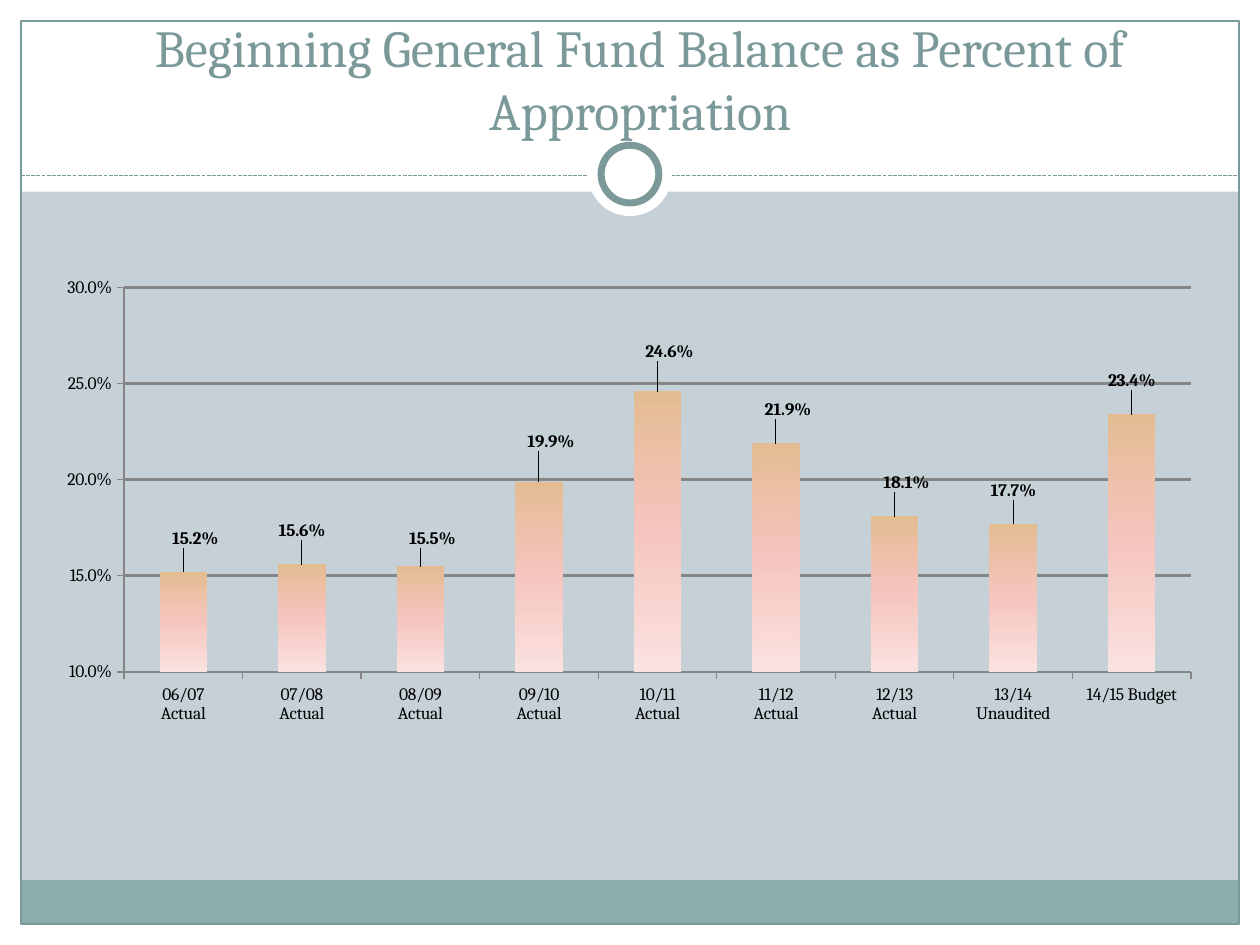
import copy
import pptx
import pptx.chart.data
import pptx.dml.color
import pptx.enum.chart
import pptx.enum.dml
import pptx.enum.shapes
import pptx.enum.text
import pptx.oxml
import pptx.oxml.ns
import pptx.util

Pt = pptx.util.Pt
RGB = pptx.dml.color.RGBColor
SHAPE = pptx.enum.shapes.MSO_SHAPE
CHART = pptx.enum.chart

WHITE = RGB(0xFF, 0xFF, 0xFF)
BLACK = RGB(0x00, 0x00, 0x00)
MIST = RGB(0xC5, 0xD1, 0xD7)
TEAL = RGB(0x7C, 0x99, 0x9A)
BAND = RGB(0x8C, 0xAD, 0xAE)
GRAY = RGB(0x86, 0x86, 0x86)
GOLD = RGB(0xCC, 0xB4, 0x00)
FADE = [(0, RGB(0xE3, 0xBC, 0x92)), (0.5, RGB(0xF6, 0xC5, 0xBF)), (1, RGB(0xFA, 0xE2, 0xE0))]

FUNDS = [
    ("06/07\nActual", 0.152, 0.01, -0.03),
    ("07/08\nActual", 0.156, 0, -0.03),
    ("08/09\nActual", 0.155, 0.01, -0.02),
    ("09/10\nActual", 0.199, 0.01, -0.04),
    ("10/11\nActual", 0.246, 0.01, -0.04),
    ("11/12\nActual", 0.219, 0.01, -0.03),
    ("12/13\nActual", 0.181, 0.01, -0.03),
    ("13/14 Unaudited", 0.177, 0, -0.03),
    ("14/15 Budget", 0.234, 0, -0.03),
]


def layout(**parts):
    body = "".join(f'<c:{key} val="{val}"/>' for key, val in parts.items())
    space = pptx.oxml.ns.nsdecls("c")
    return pptx.oxml.parse_xml(
        f"<c:layout {space}><c:manualLayout>{body}</c:manualLayout></c:layout>")


class Deck:
    face = "Cambria"

    def __init__(self):
        self.show = pptx.Presentation()
        self.show.slide_width, self.show.slide_height = Pt(720), Pt(540)
        self.slide = self.show.slides.add_slide(self.show.slide_layouts[5])
        fill = self.slide.background.fill
        fill.solid()
        fill.fore_color.rgb = MIST

    def font(self, font, size, color, bold=False):
        font.name, font.size, font.bold = self.face, Pt(size), bold
        font.color.rgb = color

    def stroke(self, line, color, width):
        line.color.rgb = color
        line.width = Pt(width)

    def shape(self, kind, box, fill=None, line=None, width=0.75):
        item = self.slide.shapes.add_shape(kind, *map(Pt, box))
        item.shadow.inherit = False
        if fill is None:
            item.fill.background()
        else:
            item.fill.solid()
            item.fill.fore_color.rgb = fill
        if line is None:
            item.line.fill.background()
        else:
            self.stroke(item.line, line, width)

    def rule(self, left, right, top):
        item = self.slide.shapes.add_connector(
            pptx.enum.shapes.MSO_CONNECTOR.STRAIGHT, *map(Pt, (left, top, right, top)))
        self.stroke(item.line, TEAL, 0.75)
        item.line.dash_style = pptx.enum.dml.MSO_LINE.SQUARE_DOT
        effect = pptx.oxml.ns.qn("a:effectLst")
        item._element.spPr.append(item._element.makeelement(effect))

    def title(self, text, box):
        item = self.slide.shapes.title
        item.left, item.top, item.width, item.height = map(Pt, box)
        frame = item.text_frame
        frame.text = text
        frame.word_wrap = True
        frame.auto_size = pptx.enum.text.MSO_AUTO_SIZE.NONE
        frame.vertical_anchor = pptx.enum.text.MSO_ANCHOR.BOTTOM
        line = frame.paragraphs[0]
        line.alignment = pptx.enum.text.PP_ALIGN.CENTER
        self.font(line.runs[0].font, 29.7, TEAL)
        self.slide.shapes._spTree.append(item._element)

    def chart(self, rows, box):
        data = pptx.chart.data.CategoryChartData(number_format="0.0%")
        data.categories = [row[0] for row in rows]
        data.add_series("Series 1", [row[1] for row in rows])
        chart = self.slide.shapes.add_chart(
            CHART.XL_CHART_TYPE.COLUMN_CLUSTERED, *map(Pt, box), data).chart
        chart.has_legend = chart.has_title = False
        self.font(chart.font, 10, BLACK)
        self.axes(chart)
        plot = chart.plots[0]
        plot.gap_width = 150
        plot.vary_by_categories = False
        self.bars(plot.series[0], rows)
        area = chart._chartSpace.chart.plotArea
        for old in area.xpath("./c:layout"):
            area.remove(old)
        area.insert(0, layout(layoutTarget="inner", xMode="edge", yMode="edge",
                              x=0.07, y=0.19, w=0.91, h=0.61))

    def axes(self, chart):
        for axis in (chart.category_axis, chart.value_axis):
            axis.major_tick_mark = CHART.XL_TICK_MARK.OUTSIDE
            axis.minor_tick_mark = CHART.XL_TICK_MARK.NONE
            self.stroke(axis.format.line, GRAY, 0.75)
            self.font(axis.tick_labels.font, 10, BLACK)
        axis = chart.value_axis
        axis.minimum_scale, axis.maximum_scale, axis.major_unit = 0.1, 0.3, 0.05
        axis.tick_labels.number_format = "0.0%"
        axis.tick_labels.number_format_is_linked = False
        axis.has_major_gridlines = True
        self.stroke(axis.major_gridlines.format.line, GRAY, 1.5)

    def bars(self, series, rows):
        series.format.fill.solid()
        series.format.fill.fore_color.rgb = GOLD
        labels = series.data_labels
        labels.show_value = True
        labels.number_format = "0.0%"
        labels.number_format_is_linked = False
        labels.position = CHART.XL_LABEL_POSITION.OUTSIDE_END
        self.font(labels.font, 10, BLACK, True)
        points = [series.points[spot] for spot in range(len(rows))]
        for point in points:
            point.format.fill.gradient()
            point.format.fill.gradient_angle = 270
            self.font(point.data_label.font, 10, BLACK, True)
            point.data_label.position = CHART.XL_LABEL_POSITION.OUTSIDE_END
        for stops in series._element.xpath(".//a:gsLst"):
            stops.insert(1, copy.deepcopy(stops[0]))
        for point in points:
            for stop, (place, color) in zip(point.format.fill.gradient_stops, FADE):
                stop.position = place
                stop.color.rgb = color
        for label, row in zip(series._element.xpath(".//c:dLbl"), rows):
            label.insert(1, layout(x=row[2], y=row[3]))

    def save(self):
        self.show.save("out.pptx")


def main():
    deck = Deck()
    for box in ((0, 528, 720, 12), (0, 0, 720, 109.5), (0, 0, 12, 540), (708, 0, 12, 540)):
        deck.shape(SHAPE.RECTANGLE, box, WHITE)
    deck.shape(SHAPE.RECTANGLE, (12, 503, 696, 25), BAND)
    deck.shape(SHAPE.RECTANGLE, (12, 12, 696, 516), line=TEAL)
    deck.rule(12, 708, 100.5)
    deck.shape(SHAPE.OVAL, (336, 75.5, 48, 48), WHITE)
    deck.shape(SHAPE.OVAL, (343.5, 83, 33, 33), WHITE, TEAL, 4)
    deck.title("Beginning General Fund Balance as Percent of Appropriation", (30, 24, 672, 60))
    deck.chart(FUNDS, (24, 96, 670, 360))
    deck.save()


if __name__ == "__main__":
    main()
